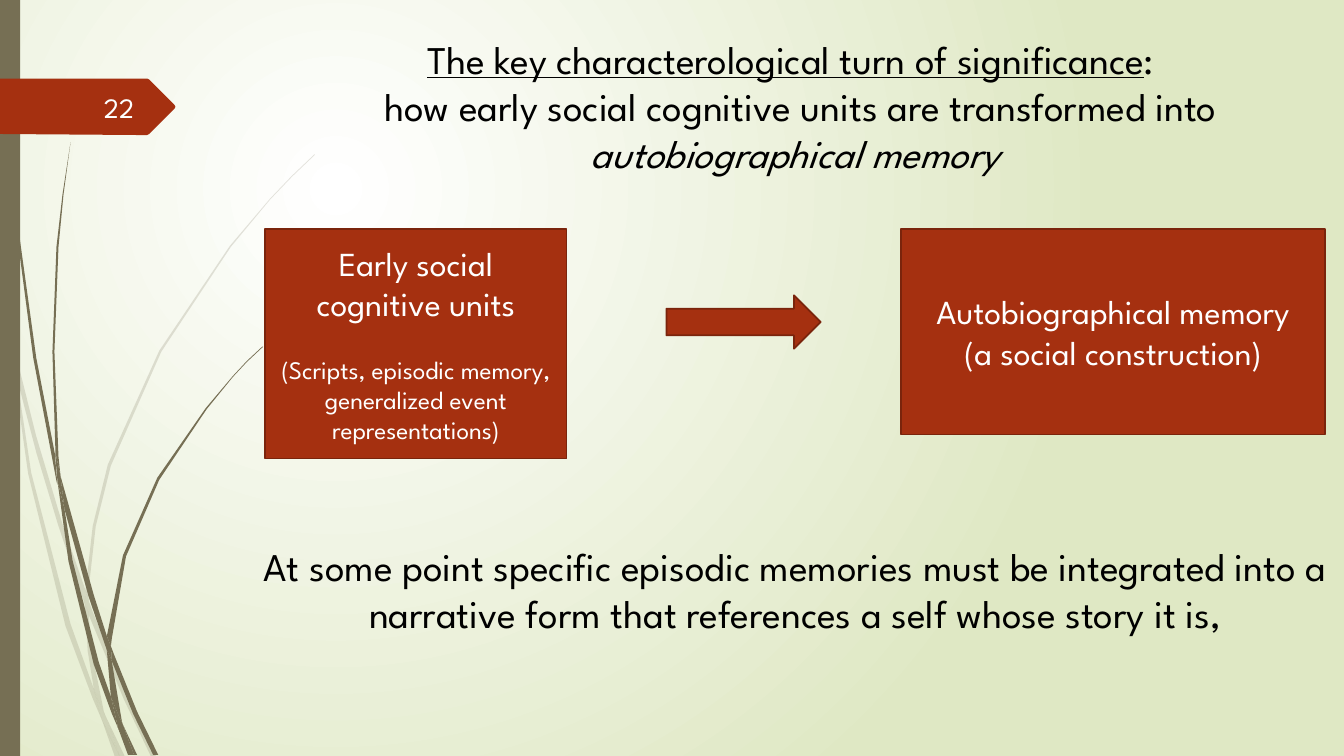
from pptx import Presentation
from pptx import util as u
from pptx.dml.color import RGBColor
from pptx.enum import shapes, text
from pptx.oxml import parse_xml
from pptx.oxml.ns import nsdecls, qn

FONT = "League Spartan"
OLIVE, RUST, RUST_DARK = "766F54", "A53010", "7A240C"
WHITE, BLACK = "FFFFFF", "000000"

PALE_GRASS = [
    [(.11, 3.5), (.09, 3.22), (0, 2.82), (0, 2.99), (.1, 3.44)],
    [(.58, 5.22), (.84, 5.99), (.85, 5.86), (.62, 5.2), (.36, 4.33),
     (.14, 3.45), (.17, 3.76), (.36, 4.49)],
    [(.92, 6.07), (.88, 5.96), (.88, 6.1), (1.23, 6.94), (1.5, 7.51),
     (1.55, 7.51), (1.27, 6.92)],
    [(1.19, 7.51), (1.24, 7.51), (1.05, 7.11)],
    [(.93, 6.83), (.7, 6.19), (.31, 4.69), (.17, 3.76), (.11, 3.5),
     (.28, 4.7), (.65, 6.21), (.92, 6.93), (1.01, 7.14), (.99, 7.07)],
    [(.84, 5.99), (.87, 6.46), (.93, 6.83), (.96, 6.92), (1.05, 7.11),
     (1.03, 7.06), (.91, 6.46), (.88, 6.1), (.88, 6.08)],
    [(.88, 5.84), (.95, 5.22), (1.1, 4.62), (1.6, 3.49), (2.29, 2.45),
     (2.68, 1.98), (2.9, 1.75), (3.12, 1.54), (3.12, 1.53), (2.89, 1.75),
     (2.68, 1.97), (2.28, 2.44), (1.58, 3.48), (1.07, 4.61), (.92, 5.22),
     (.85, 5.84), (.85, 5.86), (.88, 5.96)],
    [(1.01, 7.14), (1.14, 7.51), (1.19, 7.51)],
    [(.88, 6.08), (.88, 6.1), (.88, 5.96), (.85, 5.86), (.84, 5.99)],
    [(.96, 6.92), (.93, 6.83), (.99, 7.07), (1.01, 7.14), (1.19, 7.51),
     (1.05, 7.11)],
]
DARK_GRASS = [
    [(.07, 1.1), (.17, 2.33), (.33, 3.55), (.56, 4.77), (.57, 4.81),
     (.55, 4.57), (.55, 4.53), (.36, 3.55), (.19, 2.32), (.08, 1.09),
     (.05, .48), (.04, 0), (.03, 0), (.04, .48)],
    [(.88, 5.92), (1.06, 6.45), (1.06, 6.33), (1.06, 6.31), (.93, 5.9),
     (.6, 4.72), (.64, 5.05)],
    [(1.13, 6.49), (1.1, 6.41), (1.11, 6.56), (1.32, 7.08), (1.52, 7.49),
     (1.57, 7.49), (1.36, 7.06)],
    [(1.1, 6.91), (.98, 6.57), (.72, 5.56), (.64, 5.05), (.57, 4.77),
     (.68, 5.57), (.93, 6.59), (1.11, 7.08), (1.17, 7.22), (1.16, 7.17)],
    [(.6, 4.72), (.58, 4.53), (.54, 3.49), (.58, 2.45), (.63, 1.93),
     (.7, 1.41), (.62, 1.93), (.56, 2.45), (.52, 3.49), (.55, 4.49)],
    [(1.33, 7.49), (1.36, 7.49), (1.22, 7.19)],
    [(.57, 4.77), (.64, 5.05), (.6, 4.72), (.55, 4.49), (.55, 4.53)],
    [(1.11, 6.33), (1.25, 5.52), (1.58, 4.76), (2.05, 4.06), (2.31, 3.74),
     (2.45, 3.59), (2.61, 3.44), (2.6, 3.44), (2.45, 3.58), (2.31, 3.73),
     (2.04, 4.05), (1.56, 4.74), (1.22, 5.51), (1.06, 6.31), (1.1, 6.41)],
    [(1.17, 7.22), (1.27, 7.49), (1.31, 7.49)],
    [(1.06, 6.45), (1.1, 6.91), (1.16, 7.06), (1.22, 7.19), (1.21, 7.16),
     (1.11, 6.56), (1.09, 6.51)],
    [(1.06, 6.45), (1.09, 6.51), (1.11, 6.56), (1.1, 6.41), (1.06, 6.31),
     (1.06, 6.33)],
    [(1.16, 7.06), (1.1, 6.91), (1.16, 7.17), (1.17, 7.22), (1.3, 7.49),
     (1.33, 7.49), (1.22, 7.19)],
]
NUMBER_TAG = [(1.73, 1.08), (1.48, 1.33), (1.46, 1.34), (1.36, 1.34),
              (0, 1.33), (0, .78), (1.36, .78), (1.46, .78), (1.48, .79),
              (1.73, 1.04), (1.74, 1.06)]


def rgb(value):
    """Return the colour for a hex string."""
    return RGBColor.from_string(value)


def paint(sp, fill, line=None, alpha=None):
    """Give a shape its fill, outline and opacity in percent."""
    sp.shadow.inherit = False
    sp.fill.solid()
    sp.fill.fore_color.rgb = rgb(fill)
    if alpha:
        clr = sp.fill._xPr.find(qn("a:solidFill"))[0]
        clr.append(parse_xml(f'<a:alpha {nsdecls("a")} val="{alpha * 1000}"/>'))
    if line:
        sp.line.color.rgb = rgb(line)
        sp.line.width = u.Pt(1.25)
    else:
        sp.line.fill.background()


def add_background(s):
    """Fill the slide with a radial gradient."""
    fill = s.background.fill
    fill.gradient()
    for stop, colour in zip(fill.gradient_stops, (WHITE, "DFE8C4")):
        stop.color.rgb = rgb(colour)
    grad = s.background._cSld.find(".//" + qn("a:gradFill"))
    grad.replace(grad.find(qn("a:lin")), parse_xml(
        f'<a:path {nsdecls("a")} path="circle">'
        '<a:fillToRect l="50000" t="50000" r="100000" b="100000"/></a:path>'))


def add_outline(s, points, fill, alpha=None):
    """Draw a closed outline through points in inches."""
    start, *rest = [(u.Inches(x), u.Inches(y)) for x, y in points]
    builder = s.shapes.build_freeform(*start)
    builder.add_line_segments(rest)
    paint(builder.convert_to_shape(), fill, alpha=alpha)


def add_block(s, kind, box, fill, line=None):
    """Add a painted preset shape."""
    sp = s.shapes.add_shape(kind, *map(u.Inches, box))
    paint(sp, fill, line)
    return sp


def write(sp, paragraphs, colour, align=text.PP_ALIGN.CENTER,
          anchor=text.MSO_ANCHOR.MIDDLE):
    """Write paragraphs of (words, size, style) runs into a shape."""
    tf = sp.text_frame
    tf.word_wrap = True
    tf.vertical_anchor = anchor
    for i, runs in enumerate(paragraphs):
        p = tf.add_paragraph() if i else tf.paragraphs[0]
        p.alignment = align
        for words, size, *style in runs:
            r = p.add_run()
            r.text = words
            r.font.name = FONT
            r.font.size = u.Pt(size)
            r.font.color.rgb = rgb(colour)
            for name in style:
                setattr(r.font, name, True)
    return tf


def add_text(s, box, paragraphs, colour=BLACK, **layout):
    """Add a text box with paragraphs."""
    sp = s.shapes.add_textbox(*map(u.Inches, box))
    return write(sp, paragraphs, colour, **layout)


def main():
    """Build and save the slide."""
    prs = Presentation()
    prs.slide_width, prs.slide_height = u.Inches(13.33), u.Inches(7.5)
    s = prs.slides.add_slide(prs.slide_layouts[6])
    kinds = shapes.MSO_SHAPE
    top = text.MSO_ANCHOR.TOP

    add_background(s)
    for blade in PALE_GRASS:
        add_outline(s, blade, OLIVE, alpha=20)
    for blade in DARK_GRASS:
        add_outline(s, blade, OLIVE)
    add_block(s, kinds.RECTANGLE, (0, 0, .2, 7.5), OLIVE)
    add_outline(s, NUMBER_TAG, RUST)

    add_text(s, (2.5, 5.33, 10.77, 1.51), [
        [("At some point specific episodic memories must be integrated into a "
          "narrative form that references a self whose story it is,", 28)]],
        anchor=top)
    add_text(s, (2.86, .3, 10.06, 1.51), [
        [("The key characterological turn of significance", 28, "underline"),
         (": ", 28)],
        [(" how early social cognitive units are transformed into ", 28),
         ("autobiographical memory", 28, "italic")]], anchor=top)

    early = add_block(s, kinds.RECTANGLE, (2.63, 2.27, 2.99, 2.28),
                      RUST, RUST_DARK)
    tf = write(early, [
        [("Early social cognitive units", 24)],
        [("(Scripts, episodic memory, generalized event representations)", 18)],
    ], WHITE)
    tf.paragraphs[1].space_before = u.Pt(22)
    add_block(s, kinds.RIGHT_ARROW, (6.61, 2.93, 1.53, .53), RUST, RUST_DARK)
    memory = add_block(s, kinds.RECTANGLE, (8.94, 2.27, 4.2, 2.04),
                       RUST, RUST_DARK)
    write(memory, [[("Autobiographical memory", 24)],
                   [("(a social construction)", 24)]], WHITE)

    add_text(s, (.58, .86, .85, .4), [[("22", 20)]], "FEFFFF",
             align=text.PP_ALIGN.RIGHT)
    prs.save("out.pptx")


if __name__ == "__main__":
    main()
